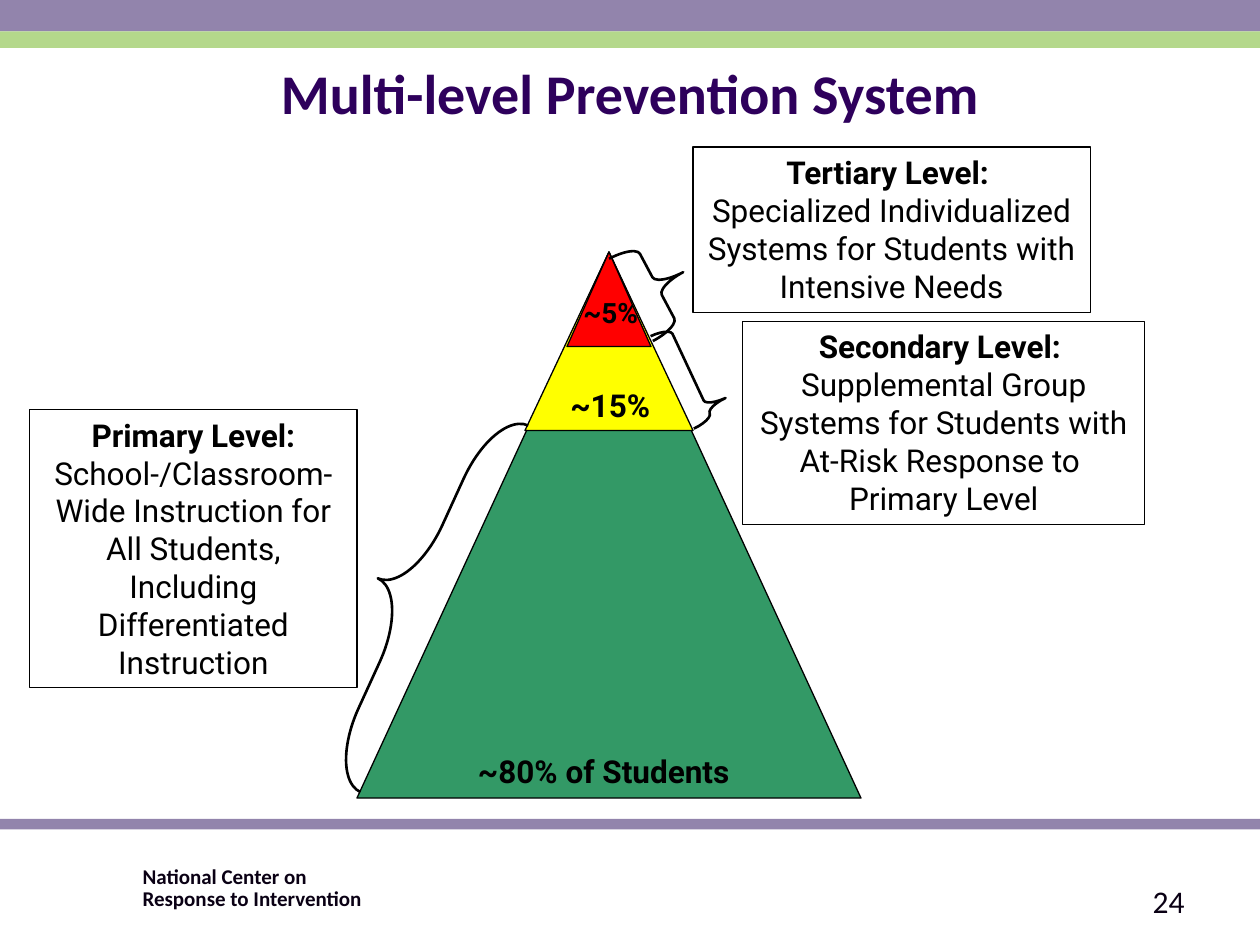
from pptx import Presentation
from pptx.dml.color import RGBColor
from pptx.enum.shapes import MSO_SHAPE as Shape
from pptx.enum.text import MSO_ANCHOR as Anchor, PP_ALIGN as Align
from pptx.util import Pt

BLACK = RGBColor(0x00, 0x00, 0x00)
INK = RGBColor(0x0A, 0x00, 0x14)
INDIGO = RGBColor(0x2E, 0x00, 0x5C)
PURPLE = RGBColor(0x92, 0x84, 0xAC)
LIME = RGBColor(0xB4, 0xD8, 0x8B)
GREEN = RGBColor(0x33, 0x99, 0x66)
YELLOW = RGBColor(0xFF, 0xFF, 0x00)
RED = RGBColor(0xFF, 0x00, 0x00)

SLIDE_WIDTH, SLIDE_HEIGHT = 720, 540
APEX_X, APEX_Y = 348, 144


class SlideBuilder:
    heading_font = "Calibri"
    body_font = "Roboto"
    body_size = 18
    outline = 0.75

    def __init__(self, slide):
        self.slide = slide

    def shape(self, kind, box, fill=None, line=None):
        item = self.slide.shapes.add_shape(kind, *map(Pt, box))
        item.shadow.inherit = False
        if fill is None:
            item.fill.background()
        else:
            item.fill.solid()
            item.fill.fore_color.rgb = fill
        if line is None:
            item.line.fill.background()
        else:
            item.line.color.rgb = BLACK
            item.line.width = Pt(line)
        return item

    def band(self, top, height, color):
        self.shape(Shape.RECTANGLE, (0, top, SLIDE_WIDTH, height), color)

    def tier(self, width, height, color):
        """Triangle hanging from the shared apex of the pyramid."""
        box = (APEX_X - width / 2, APEX_Y, width, height)
        self.shape(Shape.ISOSCELES_TRIANGLE, box, color, self.outline)

    def brace(self, kind, box, rotation, curve, tip):
        brace = self.shape(kind, box, line=1.5)
        brace.rotation = rotation
        brace.adjustments[0] = curve
        brace.adjustments[1] = tip

    def run(self, paragraph, text, font, size, color, bold):
        run = paragraph.add_run()
        run.text = text
        run.font.name = font
        run.font.size = Pt(size)
        run.font.color.rgb = color
        run.font.bold = bold

    def text(self, box, lines, size, color=BLACK, font=heading_font,
             bold=True, align=Align.CENTER, anchor=Anchor.TOP):
        """Text box whose lines share one paragraph, split by line breaks."""
        frame = self.slide.shapes.add_textbox(*map(Pt, box)).text_frame
        frame.word_wrap = True
        frame.vertical_anchor = anchor
        paragraph = frame.paragraphs[0]
        paragraph.alignment = align
        for index, line in enumerate(lines):
            if index:
                paragraph.add_line_break()
            self.run(paragraph, line, font, size, color, bold)
        return frame

    def share(self, box, label, size=body_size):
        self.text(box, [label], size, font=self.body_font)

    def level(self, box, heading, *details):
        """Outlined box with a bold heading above its description."""
        frame = self.shape(Shape.RECTANGLE, box, line=self.outline).text_frame
        frame.word_wrap = True
        frame.vertical_anchor = Anchor.TOP
        for index, line in enumerate((heading, *details)):
            paragraph = frame.add_paragraph() if index else frame.paragraphs[0]
            paragraph.alignment = Align.CENTER
            self.run(paragraph, line, self.body_font, self.body_size,
                     BLACK, index == 0)


def main():
    deck = Presentation()
    deck.slide_width, deck.slide_height = Pt(SLIDE_WIDTH), Pt(SLIDE_HEIGHT)
    page = SlideBuilder(deck.slides.add_slide(deck.slide_layouts[6]))

    page.band(468, 6, PURPLE)
    page.band(0, 18, PURPLE)
    page.band(18, 9.4, LIME)

    center_name = page.text(
        (78.5, 491.8, 233, 22),
        ["National Center on ", "Response to Intervention"],
        12, INK, align=Align.LEFT)
    center_name.margin_left = center_name.margin_right = Pt(3)
    center_name.margin_top = center_name.margin_bottom = Pt(3)
    center_name.paragraphs[0].line_spacing = 0.9
    page.text((516, 500.4, 168, 28.8), ["24"], 18, INK, bold=False,
              align=Align.RIGHT, anchor=Anchor.MIDDLE)
    page.text((36, 30, 648, 68.4), ["Multi-level Prevention System"],
              32, INDIGO)

    page.tier(288, 312, GREEN)
    page.tier(96, 102, YELLOW)
    page.tier(48, 54, RED)
    page.share((318, 217, 66, 29), "~15% ")
    page.share((318, 165.6, 66, 26.6), "~5% ", 16)

    page.brace(Shape.LEFT_BRACE, (214, 224, 41.8, 230.4), 24.6, 1.03, 0.5)
    page.brace(Shape.RIGHT_BRACE, (383, 184.3, 23.8, 58.3), 334.9, 0.4, 0.86)
    page.brace(Shape.RIGHT_BRACE, (358.6, 136.8, 33.8, 53.3), 332, 0.17, 0.5)

    page.level((396, 84, 227, 94.5), "Tertiary Level: ",
               "Specialized Individualized",
               "Systems for Students with Intensive Needs")
    page.level((424.5, 183.6, 229.7, 116), "Secondary Level: ",
               "Supplemental Group",
               "Systems for Students with At-Risk Response to ",
               "Primary Level")
    page.level((17, 234, 187, 159), "Primary Level:",
               "School-/Classroom-",
               "Wide Instruction for",
               "All Students, Including Differentiated Instruction")
    page.share((252, 426, 186, 29), "~80% of Students")

    deck.save("out.pptx")


if __name__ == "__main__":
    main()
